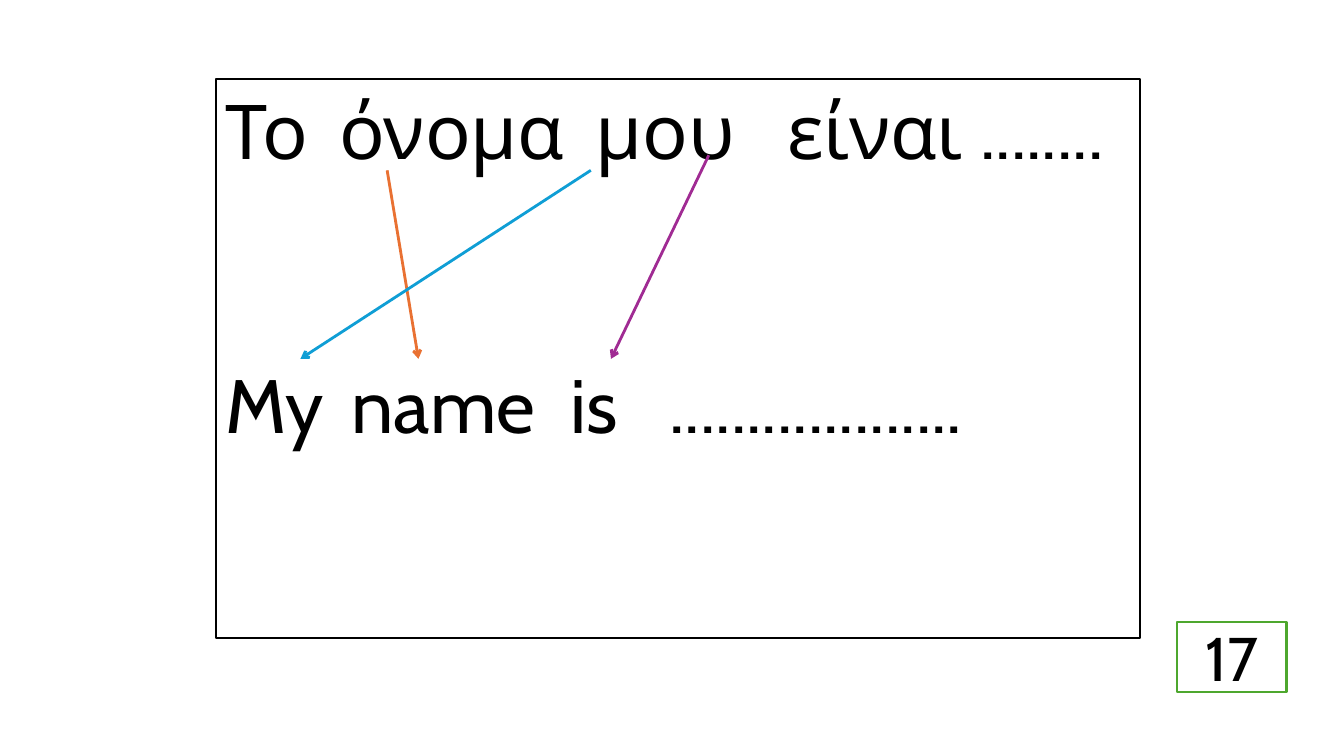
import pptx
import pptx.util
import pptx.dml.color
import pptx.enum.shapes
import pptx.enum.text
import pptx.oxml
import pptx.oxml.ns

Inches = pptx.util.Inches
Pt = pptx.util.Pt
RGBColor = pptx.dml.color.RGBColor
Align = pptx.enum.text.PP_ALIGN
Anchor = pptx.enum.text.MSO_ANCHOR

BLACK = RGBColor(0x00, 0x00, 0x00)
WHITE = RGBColor(0xFF, 0xFF, 0xFF)
GREEN = RGBColor(0x4E, 0xA7, 0x2E)
ORANGE = RGBColor(0xE9, 0x71, 0x32)
PURPLE = RGBColor(0xA0, 0x2B, 0x93)
BLUE = RGBColor(0x0F, 0x9E, 0xD5)
FONT = "Cabin"


def add_node(parent, tag, **attrs):
    """Append an empty drawing element with the given attributes."""
    node = pptx.oxml.parse_xml(f"<a:{tag} {pptx.oxml.ns.nsdecls('a')}/>")
    for name, value in attrs.items():
        node.set(name, str(value))
    parent.append(node)
    return node


def add_box(slide, left, top, width, height, edge, anchor):
    """Draw a white framed box and return its text frame."""
    box = slide.shapes.add_shape(
        pptx.enum.shapes.MSO_SHAPE.RECTANGLE,
        Inches(left), Inches(top), Inches(width), Inches(height))
    box.shadow.inherit = False
    box.fill.solid()
    box.fill.fore_color.rgb = WHITE
    box.line.color.rgb = edge
    box.line.width = Pt(1.5)
    frame = box.text_frame
    frame.word_wrap = True
    frame.vertical_anchor = anchor
    return frame


def set_text(para, text, size, align=Align.LEFT, before=0, tabs=()):
    """Write one paragraph, with tab stops in inches from the text edge."""
    para.text = text
    para.alignment = align
    if before:
        para.space_before = Pt(before)
    if tabs:
        stops = add_node(para._p.get_or_add_pPr(), "tabLst")
        for stop in tabs:
            add_node(stops, "tab", pos=Inches(stop), algn="l")
    para.font.size = Pt(size)
    para.font.name = FONT
    para.font.color.rgb = BLACK


def add_arrow(slide, start, end, color):
    """Link a Greek word to its English match."""
    points = [Inches(value) for value in (*start, *end)]
    arrow = slide.shapes.add_connector(
        pptx.enum.shapes.MSO_CONNECTOR.STRAIGHT, *points)
    arrow.line.color.rgb = color
    arrow.line.width = Pt(2)
    add_node(arrow.line._get_or_add_ln(), "tailEnd", type="arrow")
    add_node(arrow._element.spPr, "effectLst")


def main():
    deck = pptx.Presentation()
    deck.slide_width = Inches(13.33)
    deck.slide_height = Inches(7.5)
    slide = deck.slides.add_slide(deck.slide_layouts[6])

    # Greek sentence above its English meaning
    frame = add_box(slide, 2.14, 0.78, 9.17, 5.55, BLACK, Anchor.TOP)
    set_text(frame.paragraphs[0], "Το\tόνομα\tμου\tείναι ........", 54,
             tabs=(1.13, 3.67, 5.57))
    set_text(frame.add_paragraph(), "My\tname\tis\t...................", 54,
             before=131, tabs=(1.25, 3.42, 4.4))

    # Word links
    add_arrow(slide, (3.84, 1.69), (4.15, 3.56), ORANGE)
    add_arrow(slide, (7.03, 1.54), (6.06, 3.56), PURPLE)
    add_arrow(slide, (5.86, 1.69), (2.98, 3.56), BLUE)

    # Page number
    frame = add_box(slide, 11.67, 6.17, 1.09, 0.7, GREEN, Anchor.MIDDLE)
    set_text(frame.paragraphs[0], "17", 44, align=Align.CENTER)

    deck.save("out.pptx")


if __name__ == "__main__":
    main()
